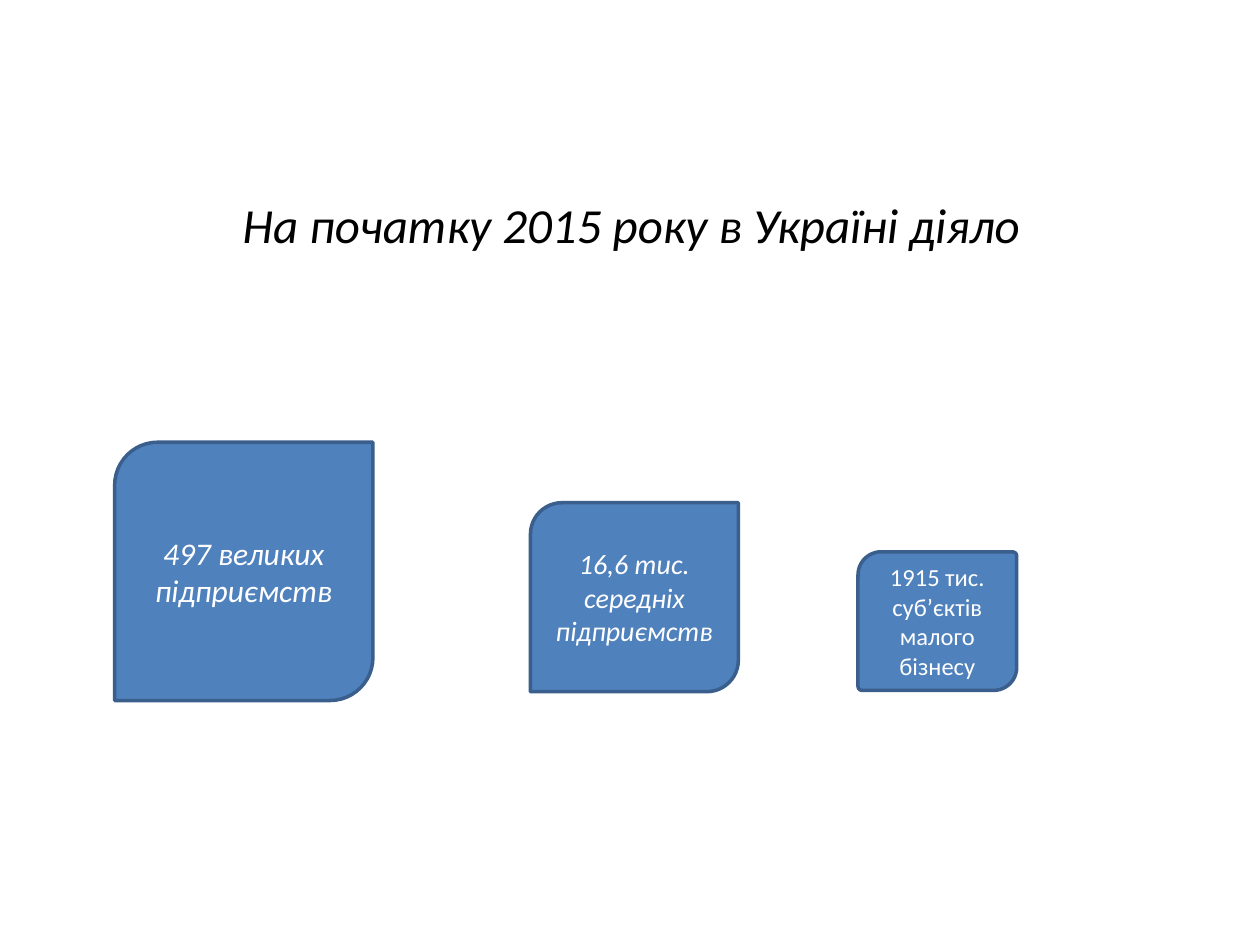
from dataclasses import dataclass

from pptx import Presentation
from pptx.dml.color import RGBColor
from pptx.enum.shapes import MSO_SHAPE as Preset
from pptx.enum.text import MSO_ANCHOR as Anchor, PP_ALIGN as Align
from pptx.text.text import TextFrame
from pptx.util import Inches, Pt

FONT = "Calibri"
BLACK = RGBColor(0x00, 0x00, 0x00)
WHITE = RGBColor(0xFF, 0xFF, 0xFF)
BLUE = RGBColor(0x4F, 0x81, 0xBD)
DARK_BLUE = RGBColor(0x3A, 0x5F, 0x8C)


@dataclass
class Enterprise:
    text: str
    left: float
    top: float
    width: float
    height: float
    size: int
    italic: bool = True
    second_corner: float = 0


ENTERPRISES = [
    Enterprise("497 великих підприємств", 0.91, 3.51, 2.05, 2.05, 18),
    Enterprise("16,6 тис. середніх підприємств", 4.21, 3.99, 1.65, 1.5, 16),
    Enterprise("1915 тис. суб’єктів малого бізнесу", 6.81, 4.38, 1.26, 1.1, 14,
               italic=False, second_corner=0.03),
]


def write_text(frame: TextFrame, text: str, size: int, color: RGBColor, italic: bool) -> None:
    frame.word_wrap = True
    frame.vertical_anchor = Anchor.MIDDLE
    para = frame.paragraphs[0]
    para.alignment = Align.CENTER
    span = para.add_run()
    span.text = text
    span.font.name = FONT
    span.font.size = Pt(size)
    span.font.italic = italic
    span.font.color.rgb = color


def add_enterprise(page, item: Enterprise) -> None:
    box = page.shapes.add_shape(
        Preset.ROUND_2_DIAG_RECTANGLE,
        Inches(item.left), Inches(item.top), Inches(item.width), Inches(item.height))
    box.adjustments[1] = item.second_corner
    box.shadow.inherit = False
    box.fill.solid()
    box.fill.fore_color.rgb = BLUE
    box.line.color.rgb = DARK_BLUE
    box.line.width = Pt(2)
    write_text(box.text_frame, item.text, item.size, WHITE, item.italic)


def main() -> None:
    deck = Presentation()
    deck.slide_width, deck.slide_height = Inches(10), Inches(7.5)
    page = deck.slides.add_slide(deck.slide_layouts[6])
    title = page.shapes.add_textbox(Inches(0.51), Inches(1.15), Inches(9), Inches(1.25))
    write_text(title.text_frame, "На початку 2015 року в Україні діяло", 28, BLACK, True)
    for item in ENTERPRISES:
        add_enterprise(page, item)
    deck.save("out.pptx")


if __name__ == "__main__":
    main()
